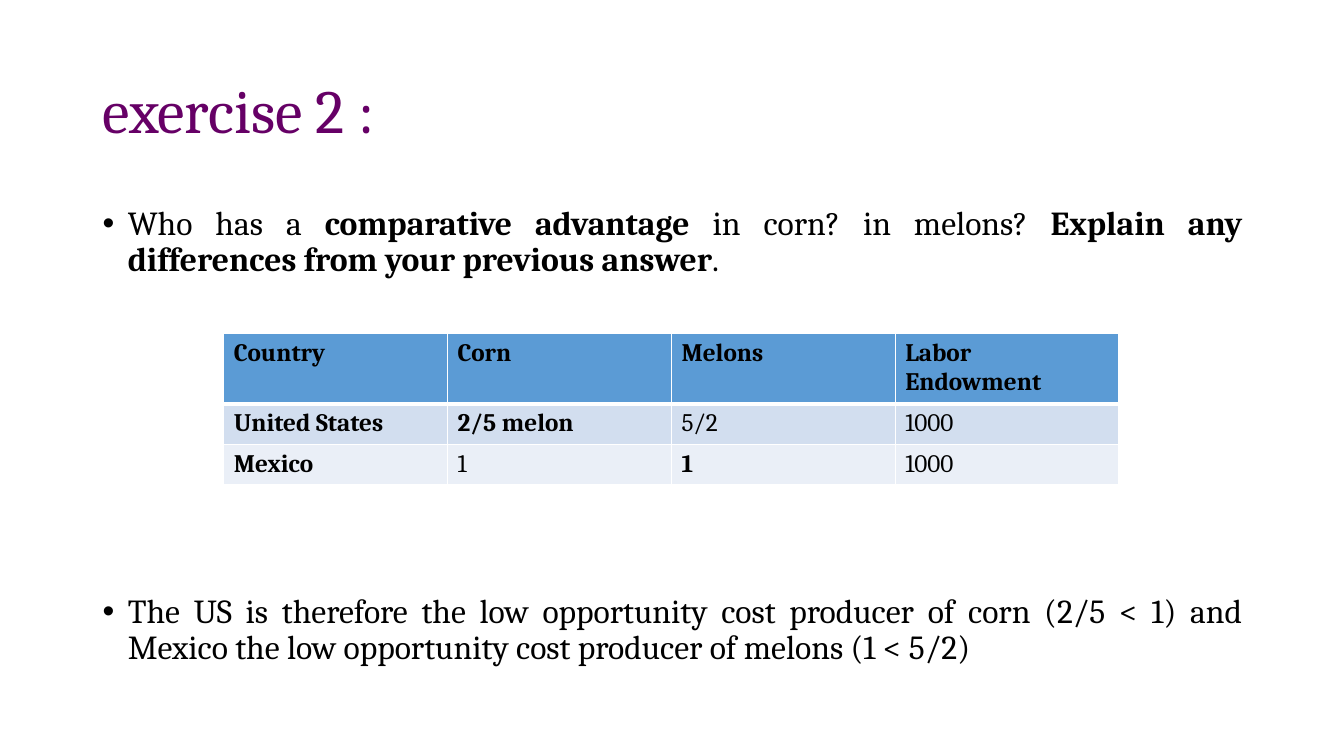
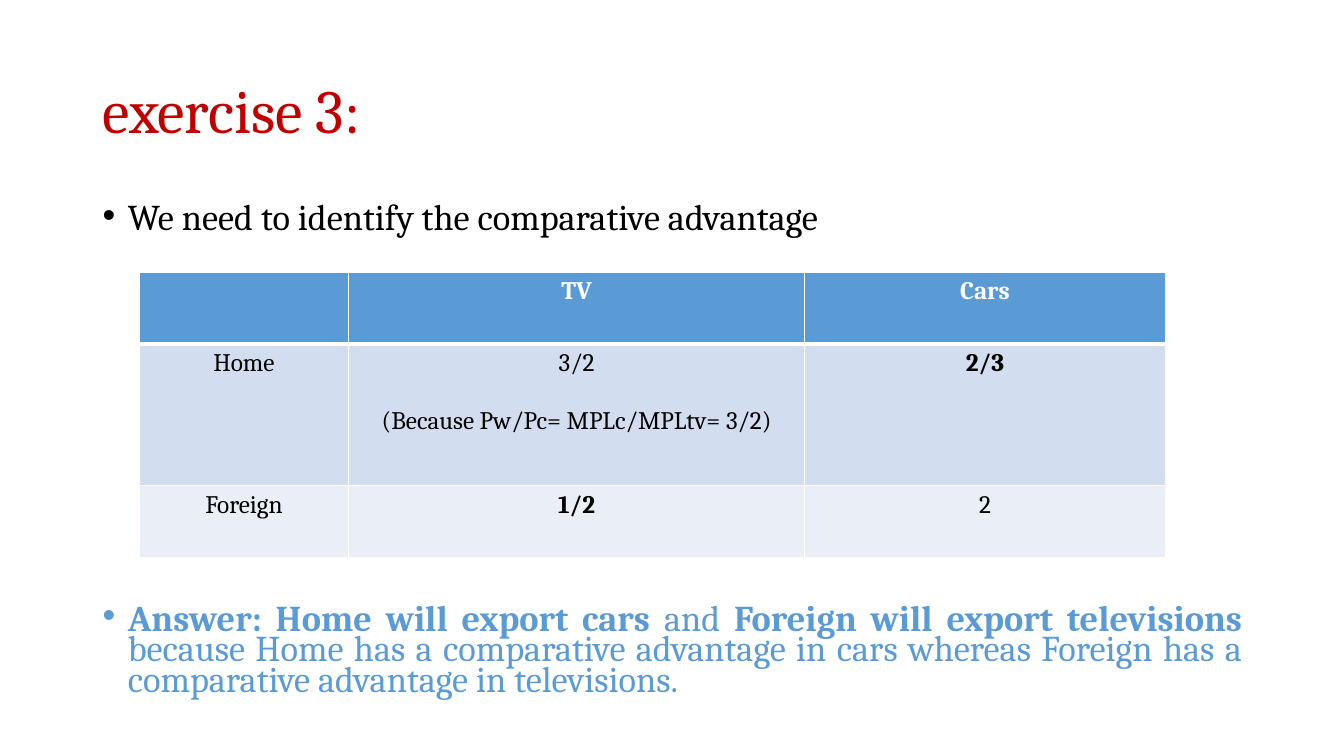
from lxml import etree
from pptx import Presentation
from pptx.dml.color import RGBColor
from pptx.enum.text import MSO_ANCHOR, PP_ALIGN
from pptx.oxml.ns import qn
from pptx.util import Inches, Pt

LEFT, CENTER, JUSTIFY = PP_ALIGN.LEFT, PP_ALIGN.CENTER, PP_ALIGN.JUSTIFY
MIDDLE = MSO_ANCHOR.MIDDLE
BLANK_LAYOUT = 6

COLORS = {
    "purple": "660066",
    "red": "C00000",
    "black": "000000",
    "white": "FFFFFF",
    "blue": "5B9BD5",
    "band_dark": "D2DEEF",
    "band_light": "EAEFF7",
}
ROW_FILLS = ("blue", "band_dark", "band_light")
FONT = "Cambria"
TEXT_LEFT, TEXT_WIDTH = 0.92, 11.5
TITLE_TOP, TITLE_HEIGHT, TITLE_SIZE = 0.4, 1.45, 44
CELL_SIZE = 18
CELL_PARAGRAPH_GAP = 21
THIN, THICK = 1, 3

# Text is a list of (words, bold) spans; a cell is (list of paragraphs, bold).
SLIDES = [
    {
        "title": ("exercise 2 :", "purple"),
        "bullet_size": 24,
        "line_spacing": 0.9,
        "bullets": [
            {"top": 2, "height": 0.9, "align": JUSTIFY, "color": "black", "spans": [
                ("Who has a ", False),
                ("comparative advantage", True),
                (" in corn? in melons? ", False),
                ("Explain any differences from your previous answer", True),
                (".", False),
            ]},
            {"top": 5.85, "height": 0.9, "align": JUSTIFY, "color": "black", "spans": [
                ("The US is therefore the low opportunity cost producer of corn "
                 "(2/5 < 1) and Mexico the low opportunity cost producer of "
                 "melons (1 < 5/2)", False),
            ]},
        ],
        "table": {
            "left": 2.22, "top": 3.31,
            "columns": [2.22] * 4, "rows": [0.68, 0.4, 0.4],
            "align": LEFT, "header_color": "black",
            "cells": [
                [(["Country"], True), (["Corn"], True), (["Melons"], True),
                 (["Labor Endowment"], True)],
                [(["United States"], True), (["2/5 melon"], True),
                 (["5/2"], False), (["1000"], False)],
                [(["Mexico"], True), (["1"], False), (["1"], True),
                 (["1000"], False)],
            ],
        },
    },
    {
        "title": ("exercise 3:", "red"),
        "bullet_size": 25.9,
        "line_spacing": 0.7,
        "bullets": [
            {"top": 2, "height": 0.5, "align": LEFT, "color": "black", "spans": [
                ("We need to identify the comparative advantage", False),
            ]},
            {"top": 5.97, "height": 1.14, "align": JUSTIFY, "color": "blue", "spans": [
                ("Answer: Home will export cars ", True),
                ("and ", False),
                ("Foreign will export televisions ", True),
                ("because Home has a comparative advantage in cars whereas "
                 "Foreign has a comparative advantage in televisions.", False),
            ]},
        ],
        "table": {
            "left": 1.38, "top": 2.7,
            "columns": [2.08, 4.52, 3.58], "rows": [0.71, 1.41, 0.71],
            "align": CENTER, "header_color": "white",
            "cells": [
                [([], True), (["TV"], True), (["Cars"], True)],
                [(["Home"], False),
                 (["3/2", "(Because Pw/Pc= MPLc/MPLtv= 3/2)"], False),
                 (["2/3"], True)],
                [(["Foreign"], False), (["1/2"], True), (["2"], False)],
            ],
        },
    },
]


def rgb(name):
    return RGBColor.from_string(COLORS[name])


def style_paragraph(para, size, color, align=LEFT):
    para.alignment = align
    para.font.name = FONT
    para.font.size = Pt(size)
    para.font.color.rgb = rgb(color)


def add_spans(para, spans):
    for words, bold in spans:
        span = para.add_run()
        span.text = words
        span.font.bold = bold


def add_text_box(page, top, height):
    box = page.shapes.add_textbox(
        Inches(TEXT_LEFT), Inches(top), Inches(TEXT_WIDTH), Inches(height))
    box.text_frame.word_wrap = True
    return box.text_frame


def add_title(page, words, color):
    frame = add_text_box(page, TITLE_TOP, TITLE_HEIGHT)
    frame.vertical_anchor = MIDDLE
    para = frame.paragraphs[0]
    para.line_spacing = 0.9
    style_paragraph(para, TITLE_SIZE, color)
    add_spans(para, [(words, False)])


def add_bullet(page, bullet, size, line_spacing):
    para = add_text_box(page, bullet["top"], bullet["height"]).paragraphs[0]
    properties = para._p.get_or_add_pPr()
    properties.set("marL", str(Inches(0.25)))
    properties.set("indent", str(Inches(-0.25)))
    etree.SubElement(properties, qn("a:buFont"), typeface="Arial")
    etree.SubElement(properties, qn("a:buChar"), char="•")
    para.line_spacing = line_spacing
    style_paragraph(para, size, bullet["color"], bullet["align"])
    add_spans(para, bullet["spans"])


def set_borders(cell, top, bottom):
    """Draw white borders; they must precede the fill in the cell's XML."""
    properties = cell._tc.get_or_add_tcPr()
    for side, width in (("L", THIN), ("R", THIN), ("T", top), ("B", bottom)):
        line = etree.SubElement(properties, qn(f"a:ln{side}"), w=str(Pt(width)))
        fill = etree.SubElement(line, qn("a:solidFill"))
        etree.SubElement(fill, qn("a:srgbClr"), val=COLORS["white"])


def fill_cell(cell, lines, bold, color, align):
    frame = cell.text_frame
    for index, words in enumerate(lines):
        para = frame.add_paragraph() if index else frame.paragraphs[0]
        if index:
            para.space_before = Pt(CELL_PARAGRAPH_GAP)
        style_paragraph(para, CELL_SIZE, color, align)
        add_spans(para, [(words, bold)])


def add_grid(page, grid):
    columns, rows = grid["columns"], grid["rows"]
    table = page.shapes.add_table(
        len(rows), len(columns), Inches(grid["left"]), Inches(grid["top"]),
        Inches(sum(columns)), Inches(sum(rows))).table
    for column, width in zip(table.columns, columns):
        column.width = Inches(width)
    for row_index, (row, height) in enumerate(zip(table.rows, rows)):
        row.height = Inches(height)
        color = "black" if row_index else grid["header_color"]
        top = THICK if row_index == 1 else THIN
        bottom = THICK if row_index == 0 else THIN
        for cell, (lines, bold) in zip(row.cells, grid["cells"][row_index]):
            set_borders(cell, top, bottom)
            cell.fill.solid()
            cell.fill.fore_color.rgb = rgb(ROW_FILLS[row_index])
            fill_cell(cell, lines, bold, color, grid["align"])


def main():
    deck = Presentation()
    deck.slide_width, deck.slide_height = Inches(13.33), Inches(7.5)
    for content in SLIDES:
        page = deck.slides.add_slide(deck.slide_layouts[BLANK_LAYOUT])
        add_title(page, *content["title"])
        for bullet in content["bullets"]:
            add_bullet(page, bullet, content["bullet_size"], content["line_spacing"])
        add_grid(page, content["table"])
    deck.save("out.pptx")


if __name__ == "__main__":
    main()
